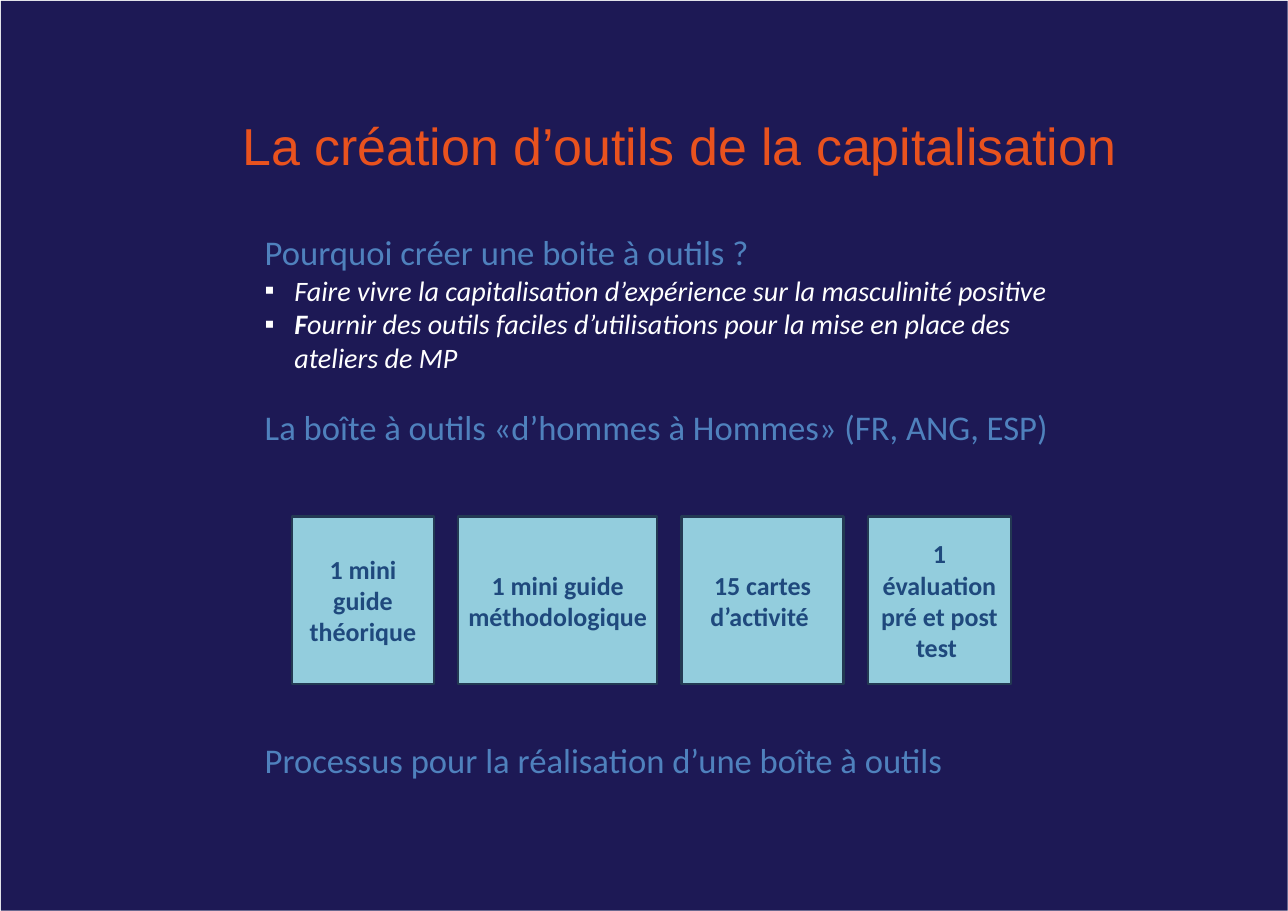
import pptx
import pptx.util
import pptx.dml.color
import pptx.enum.shapes
import pptx.enum.text
import pptx.oxml.ns
import lxml.etree

Inches = pptx.util.Inches
Pt = pptx.util.Pt
COLORS = {"navy": "1D1955", "orange": "E9521E", "blue": "4F81BD", "white": "FFFFFF",
          "card": "93CDDD", "border": "233953", "label": "1F497D"}
MM_PER_INCH = 25.4


def color(name):
    return pptx.dml.color.RGBColor.from_string(COLORS[name])


def add_run(paragraph, text, style):
    run = paragraph.add_run()
    run.text = text
    for name, value in style.items():
        if name == "color":
            run.font.color.rgb = color(value)
        else:
            setattr(run.font, name, value)


TITLE = {"name": "Arial", "size": Pt(48), "color": "orange"}
HEADING = {"name": "Calibri", "size": Pt(32), "color": "blue"}
BULLET = {"name": "Calibri", "size": Pt(26), "color": "white", "italic": True}
LABEL = {"name": "Calibri", "size": Pt(24), "color": "label", "bold": True}

presentation = pptx.Presentation()
presentation.slide_width = Inches(420 / MM_PER_INCH)
presentation.slide_height = Inches(297 / MM_PER_INCH)
slide = presentation.slides.add_slide(presentation.slide_layouts[6])
rectangle = pptx.enum.shapes.MSO_SHAPE.RECTANGLE

panel = slide.shapes.add_shape(rectangle, Inches(0.01), Inches(0.01), Inches(16.52), Inches(11.68))
panel.shadow.inherit = False
panel.fill.solid()
panel.fill.fore_color.rgb = color("navy")
panel.line.fill.background()

title = slide.shapes.add_textbox(Inches(3.11), Inches(1.46), Inches(12.28), Inches(0.81))
title_format = {"word_wrap": True, "margin_left": 0, "margin_right": 0, "margin_top": 0, "margin_bottom": 0}
for name, value in title_format.items():
    setattr(title.text_frame, name, value)
add_run(title.text_frame.paragraphs[0], "La création d’outils de la capitalisation", TITLE)

body = slide.shapes.add_textbox(Inches(3.3), Inches(2.92), Inches(10.51), Inches(8.01))
body.text_frame.word_wrap = True
body_paragraphs = [
    (0, False, [("Pourquoi créer une boite à outils ?", HEADING)]),
    (0, True, [("Faire vivre la capitalisation d’expérience sur la masculinité positive", BULLET)]),
    (0, True, [("F", BULLET | {"bold": True}),
               ("ournir des outils faciles d’utilisations pour la mise en place des ateliers de MP", BULLET)]),
    (29, False, [("La boîte à outils «d’hommes à Hommes» (FR, ANG, ESP)", HEADING)]),
    (270, False, [("Processus pour la réalisation d’une boîte à outils", HEADING)]),
]
for index, (space, bulleted, runs) in enumerate(body_paragraphs):
    paragraph = body.text_frame.add_paragraph() if index else body.text_frame.paragraphs[0]
    if space:
        paragraph.space_before = Pt(space)
    if bulleted:
        properties = paragraph._p.get_or_add_pPr()
        properties.set("marL", str(Inches(0.38)))
        properties.set("indent", str(-Inches(0.38)))
        for tag, name, value in (("a:buFont", "typeface", "Arial"), ("a:buChar", "char", "▪")):
            lxml.etree.SubElement(properties, pptx.oxml.ns.qn(tag)).set(name, value)
    for text, style in runs:
        add_run(paragraph, text, style)

cards = [
    (3.75, 1.82, "1 mini guide théorique"),
    (5.88, 2.56, "1 mini guide méthodologique "),
    (8.75, 2.08, "15 cartes d’activité "),
    (11.14, 1.84, "1 évaluation pré et post test "),
]
for left, width, label in cards:
    card = slide.shapes.add_shape(rectangle, Inches(left), Inches(6.63), Inches(width), Inches(2.15))
    card.shadow.inherit = False
    card.fill.solid()
    card.fill.fore_color.rgb = color("card")
    card.line.color.rgb = color("border")
    card.line.width = Pt(2)
    card.text_frame.word_wrap = True
    card.text_frame.vertical_anchor = pptx.enum.text.MSO_ANCHOR.MIDDLE
    paragraph = card.text_frame.paragraphs[0]
    paragraph.alignment = pptx.enum.text.PP_ALIGN.CENTER
    add_run(paragraph, label, LABEL)

presentation.save("out.pptx")
